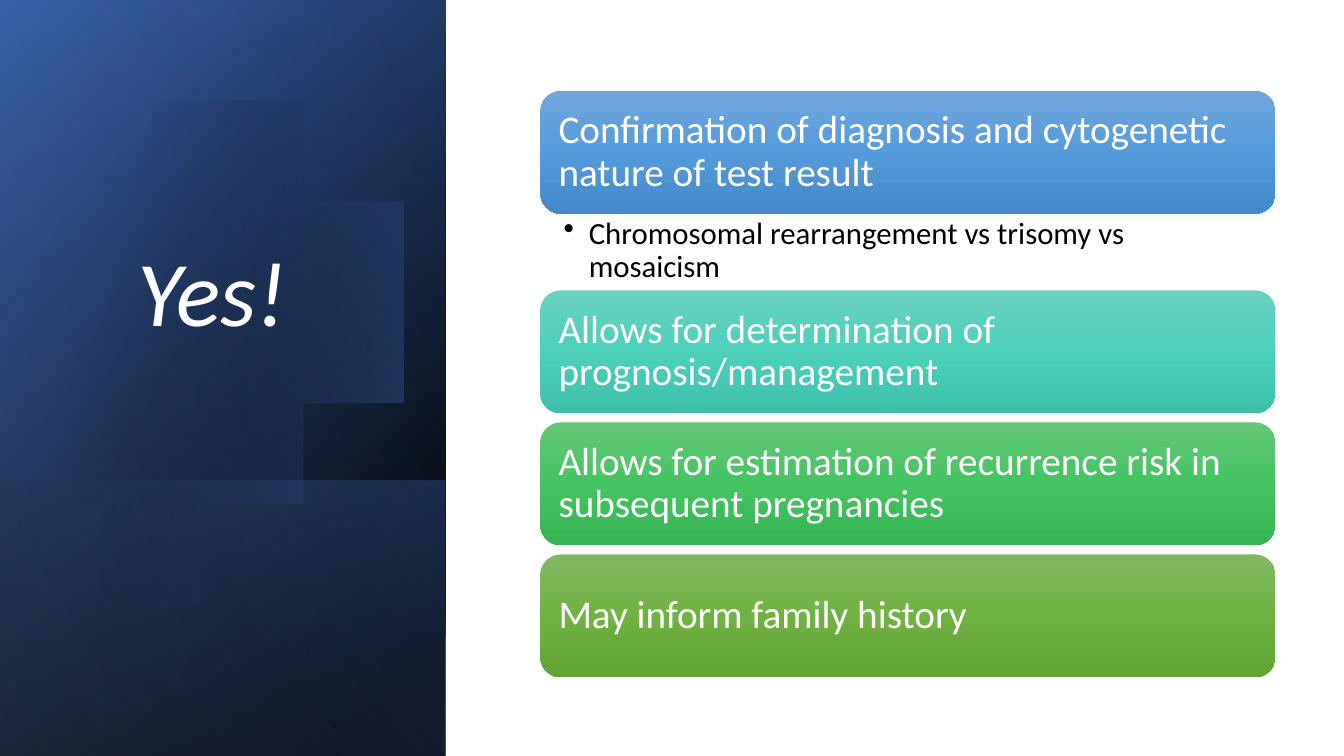
from math import acos, cos, sin

from lxml import etree
from pptx import Presentation
from pptx.dml.color import RGBColor
from pptx.enum.shapes import MSO_SHAPE as Shape
from pptx.enum.text import MSO_ANCHOR as Anchor, PP_ALIGN as Align
from pptx.oxml.ns import qn
from pptx.util import Inches, Pt

W, H = 13.33, 7.5
FONT = "Calibri"
COLORS = {
    "black": "000000", "white": "FFFFFF", "navy": "2F5597",
    "blue": "4472C4", "pale": "8FAADC",
}
# Each panel layer: top as a share of the panel height, angle, (position, colour, opacity) stops
PANEL_BASE = [
    (0, 50, [(8, "black", 100), (100, "navy", 100)]),
    (0, 30, [(0, "black", 0), (99, "blue", 46)]),
    (0.635, 130, [(2, "blue", 29), (100, "black", 30)]),
]
PANEL_GLOW = (0, 120, [(0, "black", 0), (99, "pale", 11)])
DISC_STOPS = [(29, "black", 0), (100, "blue", 43)]
# Each card: text, gradient from top to bottom, bullet below
CARDS = [
    ("Confirmation of diagnosis and cytogenetic nature of test result",
     ("71A6DB", "559BDB", "448ACA"), "Chromosomal rearrangement vs trisomy vs mosaicism"),
    ("Allows for determination of prognosis/management",
     ("6AD1C0", "4CD0BC", "3CC0AC"), None),
    ("Allows for estimation of recurrence risk in subsequent pregnancies",
     ("64C677", "44C460", "36B552"), None),
    ("May inform family history",
     ("81B861", "6FB242", "62A336"), None),
]


def fill_gradient(sp, angle, stops):
    """Replace the fill by a linear gradient of (position, colour, opacity) stops, without outline or shadow."""
    sp.shadow.inherit = False
    sp.line.fill.background()
    sp.fill.gradient()
    grad = sp.element.spPr.find(qn("a:gradFill"))
    for child in list(grad):
        grad.remove(child)
    grad.set("rotWithShape", "1")
    gs_list = etree.SubElement(grad, qn("a:gsLst"))
    for pos, color, opacity in stops:
        gs = etree.SubElement(gs_list, qn("a:gs"), pos=str(pos * 1000))
        clr = etree.SubElement(gs, qn("a:srgbClr"), val=COLORS.get(color, color))
        if opacity < 100:
            etree.SubElement(clr, qn("a:alpha"), val=str(opacity * 1000))
    etree.SubElement(grad, qn("a:lin"), ang=str(angle * 60000), scaled="0")


def write(sp, text, size, color, anchor, insets, align=Align.LEFT):
    tf = sp.text_frame
    tf.word_wrap = True
    tf.vertical_anchor = anchor
    tf.margin_left, tf.margin_top, tf.margin_right, tf.margin_bottom = map(Inches, insets)
    p = tf.paragraphs[0]
    p.text = text
    p.alignment = align
    p.line_spacing = 0.9
    font = p.runs[0].font
    font.name, font.size = FONT, Pt(size)
    font.color.rgb = RGBColor.from_string(COLORS[color])
    return p


def add_layer(slide, box, layer):
    """Lay a mirrored rectangle, turned by a quarter, over the lower part of the box."""
    x, y, w, h = box
    top, angle, stops = layer
    y, h = y + h * top, h * (1 - top)
    sp = slide.shapes.add_shape(Shape.RECTANGLE, Inches(x + (w - h) / 2),
                                Inches(y + (h - w) / 2), Inches(h), Inches(w))
    sp.rotation = 90
    sp.element.spPr.find(qn("a:xfrm")).set("flipH", "1")
    fill_gradient(sp, angle, stops)


def add_disc(slide, box, steps=90):
    """Draw a circle cut by a vertical chord just left of the box."""
    x, y, w, h = box
    cx, cy, radius = x + 0.324 * w, y + 0.45 * h, 0.305 * h
    half = acos(-(cx - x + 0.15) / radius)
    angles = [half * (2 * i / steps - 1) for i in range(steps + 1)]
    points = [(cx + radius * cos(a), cy + radius * sin(a)) for a in angles]
    builder = slide.shapes.build_freeform(*points[0], scale=Inches(1))
    builder.add_line_segments(points[1:], close=True)
    fill_gradient(builder.convert_to_shape(), 14, DISC_STOPS)


def add_title_panel(slide, box):
    x, y, w, h = box
    for layer in PANEL_BASE:
        add_layer(slide, box, layer)
    add_disc(slide, box)
    add_layer(slide, box, PANEL_GLOW)
    title = slide.shapes.add_textbox(Inches(x + 0.5), Inches(y + 2.23), Inches(3.41), Inches(1.26))
    p = write(title, "Yes! ", 66, "white", Anchor.BOTTOM, (0.1, 0.05, 0.1, 0.05), Align.CENTER)
    p.runs[0].font.italic = True


def add_bullet(slide, box, text):
    sp = slide.shapes.add_textbox(*map(Inches, box))
    p = write(sp, text, 22, "black", Anchor.TOP, (0.23, 0.04, 0.22, 0.04))
    pPr = p.runs[0].font._element.getparent().getparent().get_or_add_pPr()
    pPr.set("marL", str(Inches(0.25)))
    pPr.set("indent", str(-Inches(0.25)))
    etree.SubElement(pPr, qn("a:buChar"), char="•")


def add_card_list(slide, box, card_h=1.22, bullet_h=0.76, gap=0.09):
    x, y, w, _ = box
    for text, shades, bullet in CARDS:
        sp = slide.shapes.add_shape(Shape.ROUNDED_RECTANGLE, *map(Inches, (x, y, w, card_h)))
        fill_gradient(sp, 90, [(50 * i, c, 100) for i, c in enumerate(shades)])
        write(sp, text, 28, "white", Anchor.MIDDLE, [0.12] * 4)
        y += card_h
        if bullet:
            add_bullet(slide, (x, y, w, bullet_h), bullet)
        y += bullet_h if bullet else gap


def main():
    prs = Presentation()
    prs.slide_width, prs.slide_height = Inches(W), Inches(H)
    slide = prs.slides.add_slide(prs.slide_layouts[6])
    add_title_panel(slide, (0, 0, 4.42, H))
    add_card_list(slide, (5.36, 0.9, 7.29, 5.81))
    prs.save("out.pptx")


if __name__ == "__main__":
    main()
